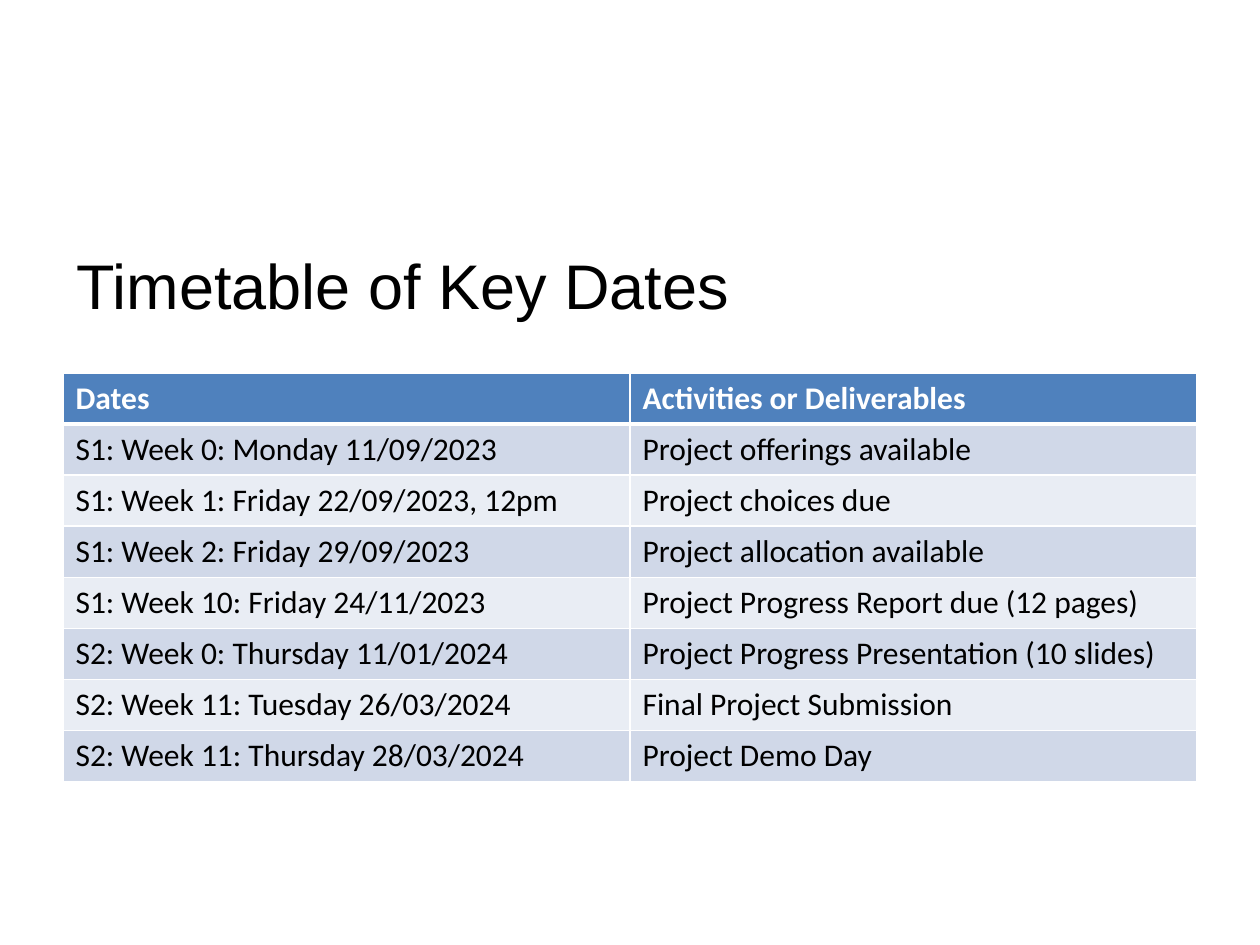
"""Build the slide with the timetable of key project dates."""
from lxml import etree
from pptx import Presentation
from pptx import util as u
from pptx.dml.color import RGBColor
from pptx.enum import text
from pptx.oxml import ns

TITLE = "Timetable of Key Dates"
ROWS = [
    ("Dates", "Activities or Deliverables"),
    ("S1: Week 0: Monday 11/09/2023", "Project offerings available"),
    ("S1: Week 1: Friday 22/09/2023, 12pm", "Project choices due"),
    ("S1: Week 2: Friday 29/09/2023", "Project allocation available"),
    ("S1: Week 10: Friday 24/11/2023", "Project Progress Report due (12 pages)"),
    ("S2: Week 0: Thursday 11/01/2024", "Project Progress Presentation (10 slides)"),
    ("S2: Week 11: Tuesday 26/03/2024", "Final Project Submission"),
    ("S2: Week 11: Thursday 28/03/2024", "Project Demo Day"),
]
BLACK = RGBColor(0x00, 0x00, 0x00)
WHITE = RGBColor(0xFF, 0xFF, 0xFF)
HEADER = RGBColor(0x4F, 0x81, 0xBD)
BANDS = [RGBColor(0xE9, 0xED, 0xF4), RGBColor(0xD0, 0xD8, 0xE8)]


def style_font(font, name, size, color, bold=False):
    font.name, font.size, font.bold = name, u.Pt(size), bold
    font.color.rgb = color


def add_border(cell, side, width):
    properties = cell._tc.get_or_add_tcPr()
    line = etree.SubElement(properties, ns.qn(f"a:ln{side}"), w=str(u.Pt(width)))
    fill = etree.SubElement(line, ns.qn("a:solidFill"))
    etree.SubElement(fill, ns.qn("a:srgbClr"), val=str(WHITE))


def add_title(page):
    title = page.shapes.title
    title.left, title.top = u.Inches(0.51), u.Inches(1.86)
    title.width, title.height = u.Inches(8.98), u.Inches(0.79)
    title.text_frame.text = TITLE
    title.text_frame.vertical_anchor = text.MSO_ANCHOR.MIDDLE
    para = title.text_frame.paragraphs[0]
    para.alignment = text.PP_ALIGN.LEFT
    style_font(para.runs[0].font, "Arial", 36, BLACK)


def add_timetable(page):
    table = page.shapes.add_table(
        len(ROWS), len(ROWS[0]),
        u.Inches(0.5), u.Inches(2.96), u.Inches(9), u.Inches(3.24)).table
    for row, values in enumerate(ROWS):
        is_header = row == 0
        for column, value in enumerate(values):
            cell = table.cell(row, column)
            cell.text_frame.text = value
            style_font(cell.text_frame.paragraphs[0].runs[0].font, "Calibri", 18,
                       WHITE if is_header else BLACK, is_header)
            for side in "LRTB":
                thick = (is_header and side == "B") or (row == 1 and side == "T")
                add_border(cell, side, 3 if thick else 1)
            cell.fill.solid()
            cell.fill.fore_color.rgb = HEADER if is_header else BANDS[row % 2]


def main():
    deck = Presentation()
    deck.slide_width, deck.slide_height = u.Inches(10), u.Inches(7.5)
    page = deck.slides.add_slide(deck.slide_layouts[5])
    add_timetable(page)
    add_title(page)
    deck.save("out.pptx")


if __name__ == "__main__":
    main()
